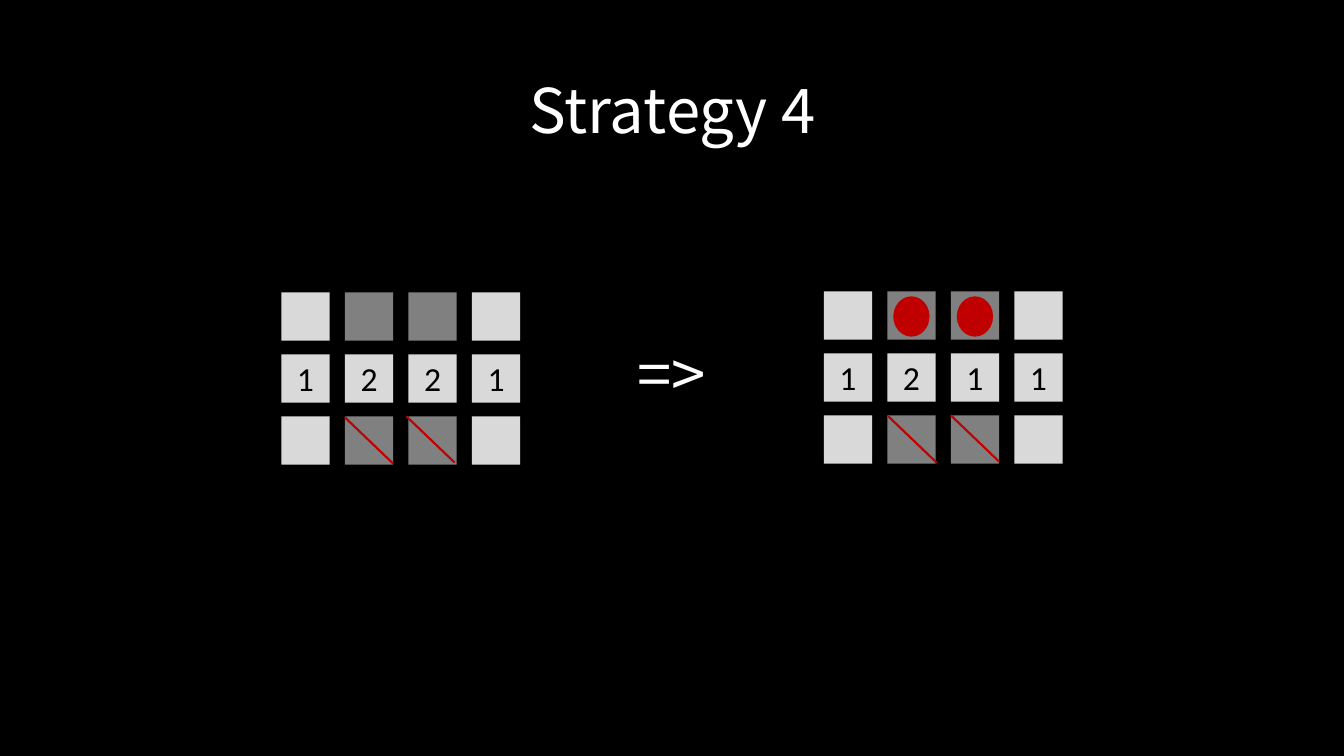
from dataclasses import dataclass
from lxml.etree import SubElement
from pptx import Presentation
from pptx.dml.color import RGBColor
from pptx.enum.shapes import MSO_CONNECTOR, MSO_SHAPE
from pptx.enum.text import MSO_ANCHOR, PP_ALIGN
from pptx.oxml.ns import qn
from pptx.util import Inches, Pt


@dataclass
class Theme:
    back: RGBColor = RGBColor(0x00, 0x00, 0x00)
    light: RGBColor = RGBColor(0xFF, 0xFF, 0xFF)
    open: RGBColor = RGBColor(0xD9, 0xD9, 0xD9)
    hidden: RGBColor = RGBColor(0x80, 0x80, 0x80)
    mark: RGBColor = RGBColor(0xC0, 0x00, 0x00)
    head: str = "Noto Sans CJK KR"
    body: str = "Calibri"
    large: int = 44
    small: int = 24


theme = Theme()


def write(shape, text, size=theme.large, font=theme.head, color=theme.light,
          spacing=0.9, inset=0.1):
    frame = shape.text_frame
    frame.word_wrap = True
    frame.vertical_anchor = MSO_ANCHOR.MIDDLE
    frame.margin_left = frame.margin_right = Inches(inset)
    frame.margin_top = frame.margin_bottom = Inches(inset / 2)
    line = frame.paragraphs[0]
    line.alignment = PP_ALIGN.CENTER
    line.line_spacing = spacing
    run = line.add_run()
    run.text = text
    run.font.size = Pt(size)
    run.font.name = font
    run.font.color.rgb = color


def draw(group, kind, left, top, width, height, color):
    shape = group.shapes.add_shape(
        kind, Inches(left), Inches(top), Inches(width), Inches(height))
    shape.shadow.inherit = False
    shape.fill.solid()
    shape.fill.fore_color.rgb = color
    shape.line.fill.background()
    return shape


# Slide
deck = Presentation()
deck.slide_width, deck.slide_height = Inches(13.33), Inches(7.5)
slide = deck.slides.add_slide(deck.slide_layouts[5])
slide.background.fill.solid()
slide.background.fill.fore_color.rgb = theme.back

# Title
title = slide.shapes.title
title.left, title.top = Inches(0.92), Inches(0.4)
title.width, title.height = Inches(11.5), Inches(1.45)
write(title, "Strategy 4")

# Sign between the boards
sign = slide.shapes.add_textbox(
    Inches(5.96), Inches(3.02), Inches(1.41), Inches(1.45))
write(sign, "=>")

# Boards: left, top, digits of the middle row, mines found
boards = [(2.79, 2.9, "1221", False), (8.17, 2.89, "1211", True)]
side, across, down = 0.48, 0.63, 0.615
for left, top, digits, solved in boards:
    group = slide.shapes.add_group_shape()
    for row in range(3):
        for col, digit in enumerate(digits):
            covered = row != 1 and col in (1, 2)
            cell = draw(group, MSO_SHAPE.RECTANGLE, left + col * across,
                        top + row * down, side, side,
                        theme.hidden if covered else theme.open)
            if row == 1:
                write(cell, digit, size=theme.small, font=theme.body,
                      color=theme.back, spacing=1, inset=0)
    if solved:
        for col in (1, 2):
            draw(group, MSO_SHAPE.OVAL, left + col * across + 0.06,
                 top + 0.05, 0.36, 0.4, theme.mark)

# Strokes through the ruled-out cells
for x, y in [(3.42, 4.14), (4.03, 4.13), (8.81, 4.13), (9.43, 4.12)]:
    stroke = slide.shapes.add_connector(
        MSO_CONNECTOR.STRAIGHT, Inches(x + side), Inches(y + 0.46),
        Inches(x), Inches(y))
    stroke.line.color.rgb = theme.mark
    stroke.line.width = Pt(1.5)
    SubElement(stroke.element.spPr, qn("a:effectLst"))

deck.save("out.pptx")
